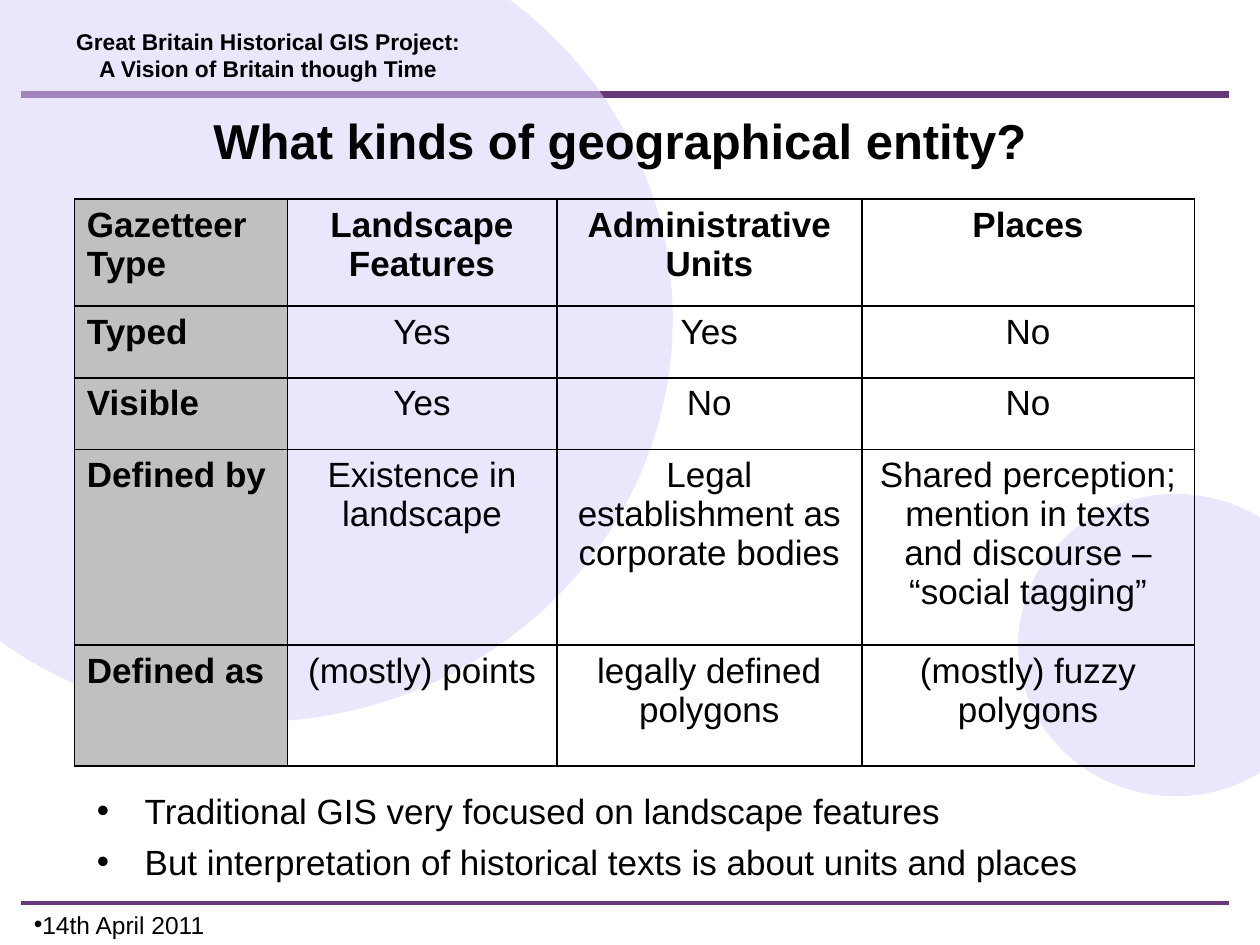
from lxml import etree
from pptx import Presentation
from pptx.dml.color import RGBColor
from pptx.enum import shapes, text
from pptx.oxml import ns
from pptx.util import Inches, Pt

BLACK, PURPLE, LILAC, GREY = "000000", "683979", "D7D1FD", "C0C0C0"
PROJECT = "Great Britain Historical GIS Project:\vA Vision of Britain though Time"
TITLE = "What kinds of geographical entity?"
DATE = "14th April 2011"
POINTS = [
    "Traditional GIS very focused on landscape features",
    "But interpretation of historical texts is about units and places",
]
ENTITIES = [
    ("Gazetteer Type", "Landscape Features", "Administrative Units", "Places"),
    ("Typed", "Yes", "Yes", "No"),
    ("Visible", "Yes", "No", "No"),
    ("Defined by", "Existence in landscape",
     "Legal establishment as corporate bodies",
     "Shared perception; mention in texts and discourse – “social tagging”"),
    ("Defined as", "(mostly) points", "legally defined polygons",
     "(mostly) fuzzy polygons"),
]
COLUMN_WIDTHS = [1.69, 2.14, 2.42, 2.64]
ROW_HEIGHTS = [0.85, 0.57, 0.57, 1.55, 0.96]
RULES = [(0.75, 4.5), (7.17, 2.25)]
CIRCLES = [(-1.33, -0.67, 6.67, 6.4), (8.08, 3.92, 2.5, 2.4)]
LEFT, CENTER = text.PP_ALIGN.LEFT, text.PP_ALIGN.CENTER


def color(value):
    """Turn a hex string into a colour."""
    return RGBColor.from_string(value)


def add(parent, tag, **attributes):
    """Append a DrawingML element to a parent element."""
    return etree.SubElement(parent, ns.qn(tag), attributes)


def style(paragraph, size, bold=False, align=LEFT):
    """Set the alignment and font of a paragraph."""
    paragraph.alignment = align
    for run in paragraph.runs:
        font = run.font
        font.name, font.size, font.bold = "Arial", Pt(size), bold
        font.color.rgb = color(BLACK)


def add_bullet(paragraph, indent=0):
    """Give a paragraph a bullet with a hanging indent in inches."""
    properties = paragraph._p.get_or_add_pPr()
    properties.set("marL", str(Inches(indent)))
    properties.set("indent", str(-Inches(indent)))
    add(properties, "a:buFont", typeface="Arial")
    add(properties, "a:buChar", char="•")


def add_text(slide, box, lines, size, bold=False, align=LEFT,
             anchor=text.MSO_ANCHOR.TOP, bullet_indent=None):
    """Add a wrapped text box with one paragraph per line."""
    frame = slide.shapes.add_textbox(*map(Inches, box)).text_frame
    frame.word_wrap, frame.vertical_anchor = True, anchor
    for index, line in enumerate(lines):
        paragraph = frame.add_paragraph() if index else frame.paragraphs[0]
        paragraph.text = line
        if index:
            paragraph.space_before = Pt(size * 0.25)
        if bullet_indent is not None:
            add_bullet(paragraph, bullet_indent)
        style(paragraph, size, bold, align)


def add_rule(slide, top, weight):
    """Draw a horizontal rule across the slide."""
    rule = slide.shapes.add_connector(
        shapes.MSO_CONNECTOR.STRAIGHT,
        Inches(9.75), Inches(top), Inches(0.17), Inches(top))
    rule.line.color.rgb, rule.line.width = color(PURPLE), Pt(weight)
    add(rule._element.spPr, "a:effectLst")


def add_circle(slide, box):
    """Draw a half-transparent background circle."""
    circle = slide.shapes.add_shape(shapes.MSO_SHAPE.OVAL, *map(Inches, box))
    circle.shadow.inherit = False
    circle.line.fill.background()
    circle.fill.solid()
    circle.fill.fore_color.rgb = color(LILAC)
    fill = circle._element.spPr.find(ns.qn("a:solidFill"))
    add(fill[0], "a:alpha", val="50000")


def add_borders(cell):
    """Outline a table cell in black."""
    properties = cell._tc.get_or_add_tcPr()
    for side in ("a:lnL", "a:lnR", "a:lnT", "a:lnB"):
        fill = add(add(properties, side, w=str(Pt(1))), "a:solidFill")
        add(fill, "a:srgbClr", val=BLACK)


def add_entity_table(slide):
    """Add the table that compares gazetteer types."""
    table = slide.shapes.add_table(
        len(ROW_HEIGHTS), len(COLUMN_WIDTHS), Inches(0.59), Inches(1.58),
        Inches(sum(COLUMN_WIDTHS)), Inches(sum(ROW_HEIGHTS))).table
    table.first_row = table.horz_banding = False
    for column, width in zip(table.columns, COLUMN_WIDTHS):
        column.width = Inches(width)
    for r, (height, entries) in enumerate(zip(ROW_HEIGHTS, ENTITIES)):
        table.rows[r].height = Inches(height)
        for c, entry in enumerate(entries):
            cell = table.cell(r, c)
            cell.text_frame.text = entry
            style(cell.text_frame.paragraphs[0], 20,
                  r == 0 or c == 0, CENTER if c else LEFT)
            add_borders(cell)
            if c:
                cell.fill.background()
            else:
                cell.fill.solid()
                cell.fill.fore_color.rgb = color(GREY)


def main():
    """Build the slide on kinds of geographical entity."""
    deck = Presentation()
    deck.slide_width, deck.slide_height = Inches(10), Inches(7.5)
    slide = deck.slides.add_slide(deck.slide_layouts[6])
    for top, weight in RULES:
        add_rule(slide, top, weight)
    for box in CIRCLES:
        add_circle(slide, box)
    add_text(slide, (0.25, 0.17, 3.75, 0.53), [PROJECT], 13, True, CENTER)
    add_text(slide, (0.67, 0.84, 8.5, 0.54), [TITLE], 28, True, CENTER,
             text.MSO_ANCHOR.MIDDLE)
    add_text(slide, (0.67, 6.22, 8.5, 0.82), POINTS, 20, bullet_indent=0.38)
    add_text(slide, (0.17, 7.17, 2.08, 0.25), [DATE], 14, bullet_indent=0)
    add_entity_table(slide)
    deck.save("out.pptx")


if __name__ == "__main__":
    main()
